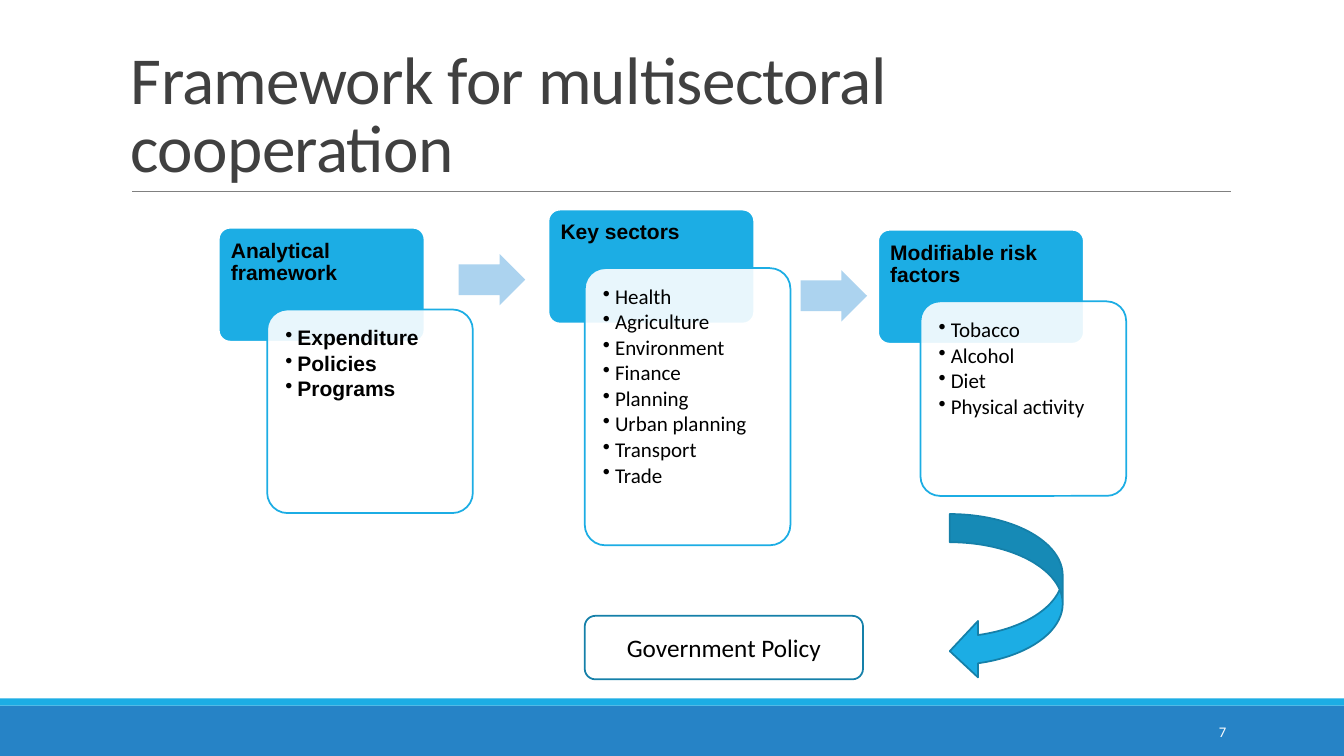
from lxml import etree
from pptx import Presentation
from pptx.dml.color import RGBColor
from pptx.enum import shapes, text
from pptx.oxml.ns import qn
from pptx.util import Inches, Pt

COLORS = {
    "black": "000000", "white": "FFFFFF", "title": "404040", "rule": "808080",
    "cyan": "1CADE4", "blue": "2683C6", "pale": "ACD3EF", "teal": "1580A9",
}
SHAPE = shapes.MSO_SHAPE
ANCHOR = text.MSO_ANCHOR
ALIGN = text.PP_ALIGN

prs = Presentation()
prs.slide_width, prs.slide_height = Inches(13.33), Inches(7.5)
slide = prs.slides.add_slide(prs.slide_layouts[6])


def add_block(kind, box, fill=None, line=None):
    block = slide.shapes.add_shape(kind, *map(Inches, box))
    block.shadow.inherit = False
    if fill:
        block.fill.solid()
        block.fill.fore_color.rgb = RGBColor.from_string(COLORS[fill])
    else:
        block.fill.background()
    if line:
        block.line.color.rgb = RGBColor.from_string(COLORS[line])
        block.line.width = Pt(1.25)
    else:
        block.line.fill.background()
    return block


def write(holder, lines, size, font="Calibri", color="black", bold=False, anchor=ANCHOR.TOP,
          align=ALIGN.LEFT, spacing=1.0, after=0, insets=(0.1, 0.05, 0.1, 0.05), bullets=False):
    """Fill a shape or text box with one paragraph per line; insets run left, top, right, bottom."""
    frame = holder.text_frame
    frame.word_wrap = True
    frame.vertical_anchor = anchor
    frame.margin_left, frame.margin_top, frame.margin_right, frame.margin_bottom = map(Inches, insets)
    for i, line in enumerate(lines):
        paragraph = frame.add_paragraph() if i else frame.paragraphs[0]
        paragraph.alignment = align
        paragraph.line_spacing = spacing
        paragraph.space_after = Pt(after)
        if bullets:
            properties = paragraph._p.get_or_add_pPr()
            properties.set("marL", str(Inches(0.12)))
            properties.set("indent", str(-Inches(0.12)))
            etree.SubElement(properties, qn("a:buChar")).set("char", "•")
        run = paragraph.add_run()
        run.text = line
        run.font.size, run.font.name, run.font.bold = Pt(size), font, bold
        run.font.color.rgb = RGBColor.from_string(COLORS[color])


# Footer bands, title and rule
add_block(SHAPE.RECTANGLE, (0, 7, 13.33, 0.5), "blue")
add_block(SHAPE.RECTANGLE, (0, 6.93, 13.33, 0.07), "cyan")

rule = slide.shapes.add_connector(
    shapes.MSO_CONNECTOR.STRAIGHT, Inches(1.31), Inches(1.9), Inches(12.21), Inches(1.9))
rule.line.color.rgb = RGBColor.from_string(COLORS["rule"])
rule.line.width = Pt(0.5)
etree.SubElement(rule._element.spPr, qn("a:effectLst"))

title = slide.shapes.add_textbox(Inches(1.2), Inches(0.31), Inches(11), Inches(1.59))
write(title, ["Framework for multisectoral cooperation"], 48, color="title",
      anchor=ANCHOR.BOTTOM, spacing=0.85, insets=(0.1, 0.05, 0.4, 0.05))
title.text_frame.paragraphs[0].runs[0].font._element.set("spc", "-50")

# Three stages: heading, heading position, list position and height, list font, items
stages = [
    ("Analytical framework", (2.17, 2.26), (2.65, 3.07), 2.02, "Arial",
     ["Expenditure", "Policies", "Programs"]),
    ("Key sectors", (5.44, 2.08), (5.8, 2.66), 2.75, "Calibri",
     ["Health", "Agriculture", "Environment", "Finance", "Planning",
      "Urban planning", "Transport", "Trade"]),
    ("Modifiable risk factors", (8.71, 2.28), (9.13, 2.99), 1.93, "Calibri",
     ["Tobacco", "Alcohol", "Diet", "Physical activity"]),
]
STAGE_WIDTH = 2.04
PAD = 0.06
for heading, (head_x, head_y), (list_x, list_y), list_height, list_font, items in stages:
    head_card = add_block(SHAPE.ROUNDED_RECTANGLE, (head_x, head_y, STAGE_WIDTH, 1.13), "cyan", "white")
    head_card.adjustments[0] = 0.1
    head_text = slide.shapes.add_textbox(*map(Inches, (head_x, head_y, STAGE_WIDTH, 0.75)))
    write(head_text, [heading], 15, "Arial", bold=True, spacing=0.9, after=5,
          insets=(0.12, 0.12, 0.12, 0.06))

    list_card = add_block(SHAPE.ROUNDED_RECTANGLE, (list_x, list_y, STAGE_WIDTH, list_height), "white", "cyan")
    list_card.adjustments[0] = 0.1
    fill_color = list_card._element.spPr.find(qn("a:solidFill"))[0]
    etree.SubElement(fill_color, qn("a:alpha")).set("val", "90000")
    list_text = slide.shapes.add_textbox(*map(Inches, (
        list_x + PAD, list_y + PAD, STAGE_WIDTH - 2 * PAD, list_height - 2 * PAD)))
    write(list_text, items, 15, list_font, bold=list_font == "Arial", spacing=0.9, after=2,
          insets=(0.12,) * 4, bullets=True)

for arrow_x, arrow_y in [(4.55, 2.52), (7.94, 2.68)]:
    stage_arrow = add_block(SHAPE.RIGHT_ARROW, (arrow_x, arrow_y, 0.66, 0.51), "pale")
    stage_arrow.adjustments[0] = 0.6

# Outcome
policy = add_block(SHAPE.ROUNDED_RECTANGLE, (5.8, 6.11, 2.76, 0.63), line="teal")
write(policy, ["Government Policy"], 18, anchor=ANCHOR.MIDDLE, align=ALIGN.CENTER)
add_block(SHAPE.CURVED_LEFT_ARROW, (9.42, 5.1, 1.12, 1.64), "cyan", "teal")

page_number = slide.shapes.add_textbox(Inches(10.83), Inches(7.06), Inches(1.43), Inches(0.4))
write(page_number, ["7"], 10.5, color="white", anchor=ANCHOR.MIDDLE, align=ALIGN.RIGHT)

prs.save("out.pptx")
